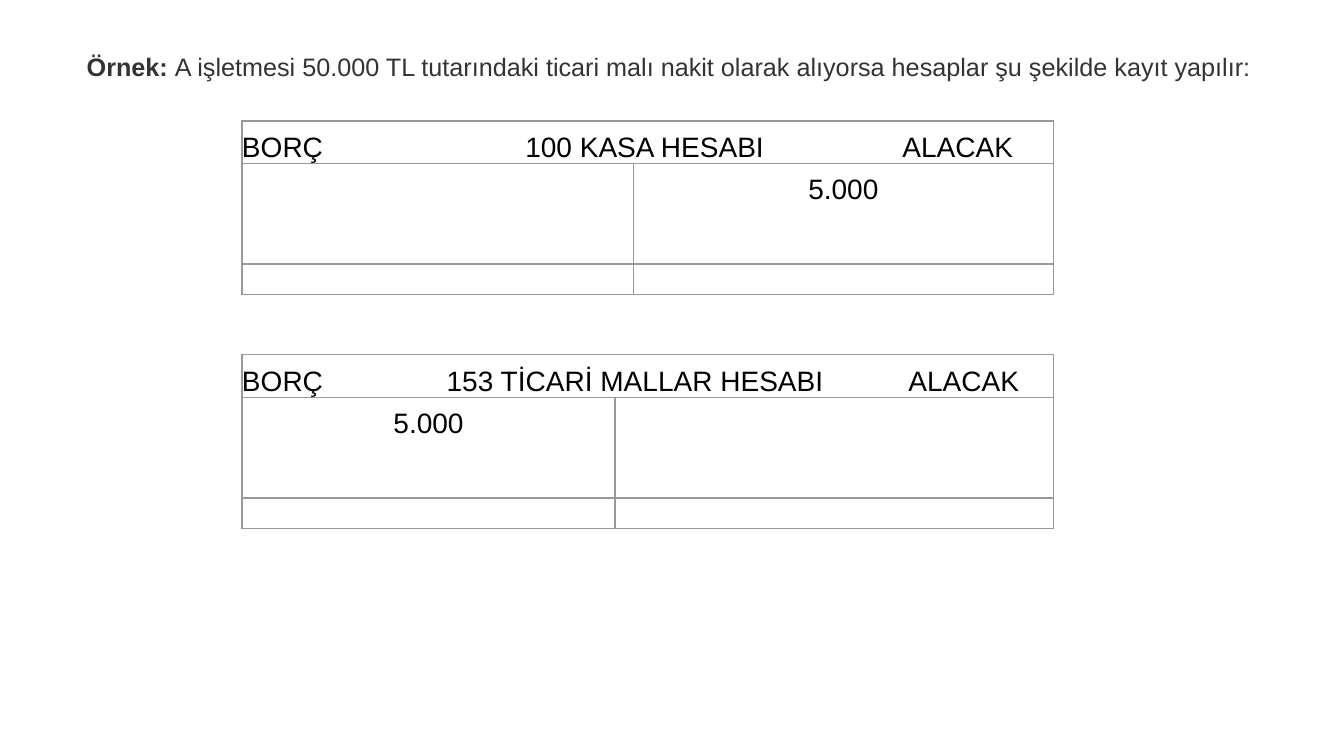
from pptx import Presentation
from pptx.dml.color import RGBColor
from pptx.enum.text import MSO_ANCHOR, MSO_AUTO_SIZE, PP_ALIGN
from pptx.oxml.ns import qn
from pptx.util import Inches, Pt
from lxml.etree import SubElement

COLORS = {"heading": "333333", "text": "000000", "border": "999999"}
FONT = "Arial"
LINE = Pt(15)
ROW_HEIGHTS = (0.42, 1.0, 0.21)
TABLE_LEFT, TABLE_WIDTH = 2.4, 8.05


def add_text(p, text, size=20, color="text", bold=False, align=PP_ALIGN.LEFT):
    p.alignment = align
    r = p.add_run()
    r.text = text
    r.font.name = FONT
    r.font.size = Pt(size)
    r.font.bold = bold
    r.font.color.rgb = RGBColor.from_string(COLORS[color])


def add_tabs(p, stops):
    tabs = SubElement(p._p.get_or_add_pPr(), qn("a:tabLst"))
    for stop in stops:
        SubElement(tabs, qn("a:tab"), pos=str(Inches(stop)), algn="l")


def format_cell(cell):
    # Thin grey border on every side, no fill, no insets
    tc_pr = cell._tc.get_or_add_tcPr()
    for side in ("lnL", "lnR", "lnT", "lnB"):
        ln = SubElement(tc_pr, qn(f"a:{side}"), w=str(Pt(1)))
        fill = SubElement(ln, qn("a:solidFill"))
        SubElement(fill, qn("a:srgbClr"), val=COLORS["border"])
    cell.fill.background()
    cell.margin_left = cell.margin_right = cell.margin_top = cell.margin_bottom = 0
    cell.text_frame.paragraphs[0].line_spacing = LINE


def add_heading(slide, label, sentence):
    title = slide.shapes.title
    title.left, title.top = Inches(0.76), Inches(0.46)
    title.width, title.height = Inches(11.84), Inches(0.4)
    tf = title.text_frame
    tf.word_wrap = True
    tf.auto_size = MSO_AUTO_SIZE.NONE
    tf.vertical_anchor = MSO_ANCHOR.TOP
    p = tf.paragraphs[0]
    add_text(p, label, size=18, color="heading", bold=True)
    add_text(p, sentence, size=18, color="heading")


def add_account(slide, top, name, debit_width, stops, amount, amount_col):
    frame = slide.shapes.add_table(3, 2, Inches(TABLE_LEFT), Inches(top),
                                   Inches(TABLE_WIDTH), Inches(sum(ROW_HEIGHTS)))
    table = frame.table
    table.first_row = table.horz_banding = False
    for col, width in zip(table.columns, (debit_width, TABLE_WIDTH - debit_width)):
        col.width = Inches(width)
    for row, height in zip(table.rows, ROW_HEIGHTS):
        row.height = Inches(height)
    for cell in table.iter_cells():
        format_cell(cell)

    # Account header across both columns
    header = table.cell(0, 0)
    header.merge(table.cell(0, 1))
    header.vertical_anchor = MSO_ANCHOR.MIDDLE
    header.margin_top = LINE
    p = header.text_frame.paragraphs[0]
    add_tabs(p, stops)
    add_text(p, f"BORÇ\t{name}\tALACAK")

    # Amount on the debit or credit side
    entry = table.cell(1, amount_col)
    entry.margin_top = LINE
    add_text(entry.text_frame.paragraphs[0], amount, align=PP_ALIGN.CENTER)


def main():
    prs = Presentation()
    prs.slide_width, prs.slide_height = Inches(13.33), Inches(7.5)
    slide = prs.slides.add_slide(prs.slide_layouts[5])

    add_heading(slide, "Örnek:\u00a0".replace("\u00a0", " "),
                "A işletmesi 50.000 TL tutarındaki ticari malı nakit olarak "
                "alıyorsa hesaplar şu şekilde kayıt yapılır:")
    add_account(slide, 1.2, "100 KASA HESABI", 3.88, (2.81, 6.55), "5.000", 1)
    add_account(slide, 3.52, "153 TİCARİ MALLAR HESABI", 3.7, (2.03, 6.61), "5.000", 0)

    prs.save("out.pptx")


if __name__ == "__main__":
    main()
